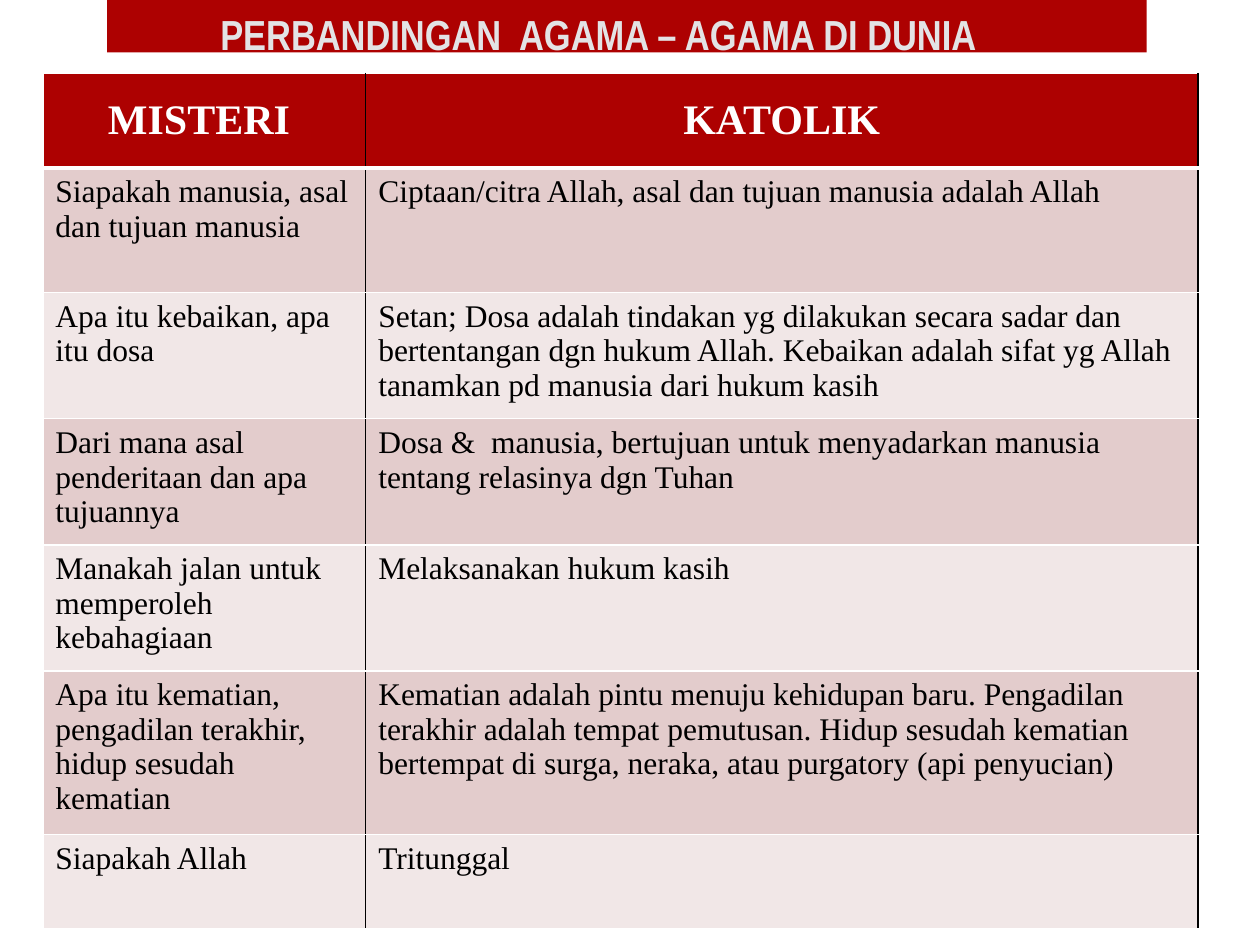
import dataclasses

import pptx
import pptx.dml.color
import pptx.enum.shapes
import pptx.enum.text
import pptx.oxml.ns
import pptx.util
from lxml import etree

Pt = pptx.util.Pt
Align = pptx.enum.text.PP_ALIGN
Anchor = pptx.enum.text.MSO_ANCHOR
RED = "AD0101"
ROSE = "E3CCCC"
PALE = "F1E7E7"
WHITE = "FFFFFF"
BLACK = "000000"


@dataclasses.dataclass
class Row:
    height: float
    topic: str
    answer: str


ROWS = [
    Row(54, "MISTERI ", "KATOLIK"),
    Row(71.25, "Siapakah manusia, asal dan tujuan manusia",
        "Ciptaan/citra Allah, asal dan tujuan manusia adalah Allah"),
    Row(67.5, "Apa itu kebaikan, apa itu dosa",
        "Setan; Dosa adalah tindakan yg dilakukan secara sadar dan bertentangan "
        "dgn hukum Allah. Kebaikan adalah sifat yg Allah tanamkan pd manusia "
        "dari hukum kasih"),
    Row(71.25, "Dari mana asal penderitaan dan apa tujuannya",
        "Dosa &  manusia, bertujuan untuk menyadarkan manusia tentang "
        "relasinya dgn Tuhan"),
    Row(71.25, "Manakah jalan untuk memperoleh kebahagiaan",
        "Melaksanakan hukum kasih"),
    Row(92.5, "Apa itu kematian, pengadilan terakhir, hidup sesudah kematian",
        "Kematian adalah pintu menuju kehidupan baru. Pengadilan terakhir adalah "
        "tempat pemutusan. Hidup sesudah kematian bertempat di surga, neraka, "
        "atau purgatory (api penyucian)"),
    Row(54, "Siapakah Allah", "Tritunggal"),
]
WIDTHS = [184.5, 475.5]


def color(code: str) -> pptx.dml.color.RGBColor:
    return pptx.dml.color.RGBColor.from_string(code)


def write(frame, text: str, face: str, size: float, code: str,
          bold: bool, align: Align) -> None:
    para = frame.paragraphs[0]
    para.text = text
    para.alignment = align
    para.font.name = face
    para.font.size = Pt(size)
    para.font.bold = bold
    para.font.color.rgb = color(code)


def edge(cell, side: str, code: str, width: float) -> None:
    qn = pptx.oxml.ns.qn
    props = cell._tc.get_or_add_tcPr()
    line = etree.SubElement(props, qn(f"a:ln{side}"), w=str(Pt(width)))
    fill = etree.SubElement(line, qn("a:solidFill"))
    etree.SubElement(fill, qn("a:srgbClr"), val=code)


def draw_cell(cell, text: str, row: int, col: int) -> None:
    head = row == 0
    edge(cell, "L", BLACK if col else WHITE, 1)
    edge(cell, "R", BLACK, 1)
    edge(cell, "T", WHITE, 3 if row == 1 else 1)
    edge(cell, "B", WHITE, 3 if head else 1)
    cell.fill.solid()
    cell.fill.fore_color.rgb = color(RED if head else ROSE if row % 2 else PALE)
    cell.vertical_anchor = Anchor.MIDDLE if head else Anchor.TOP
    write(cell.text_frame, text, "Times New Roman", 24 if head else 18,
          WHITE if head else BLACK, head, Align.CENTER if head else Align.LEFT)


def draw_table(slide, rows: list[Row]) -> None:
    frame = slide.shapes.add_table(
        len(rows), len(WIDTHS), Pt(24.5), Pt(42), Pt(sum(WIDTHS)),
        Pt(sum(row.height for row in rows)))
    table = frame.table
    table.first_row = True
    table.horz_banding = False
    for col, width in enumerate(WIDTHS):
        table.columns[col].width = Pt(width)
    for num, row in enumerate(rows):
        table.rows[num].height = Pt(row.height)
        for col, text in enumerate((row.topic, row.answer)):
            draw_cell(table.cell(num, col), text, num, col)


def draw_title(slide) -> None:
    band = slide.shapes.add_shape(
        pptx.enum.shapes.MSO_SHAPE.RECTANGLE, Pt(61.2), 0, Pt(594), Pt(30))
    band.shadow.inherit = False
    band.fill.solid()
    band.fill.fore_color.rgb = color(RED)
    band.line.fill.background()
    box = slide.shapes.add_textbox(Pt(12), Pt(1.5), Pt(660), Pt(36))
    frame = box.text_frame
    frame.word_wrap = True
    frame.vertical_anchor = Anchor.BOTTOM
    write(frame, "PERBANDINGAN  AGAMA – AGAMA DI DUNIA", "Arial Narrow", 24,
          "E3E3E5", True, Align.CENTER)


def main() -> None:
    deck = pptx.Presentation()
    deck.slide_width = Pt(720)
    deck.slide_height = Pt(540)
    slide = deck.slides.add_slide(deck.slide_layouts[6])
    draw_title(slide)
    draw_table(slide, ROWS)
    deck.save("out.pptx")


if __name__ == "__main__":
    main()
